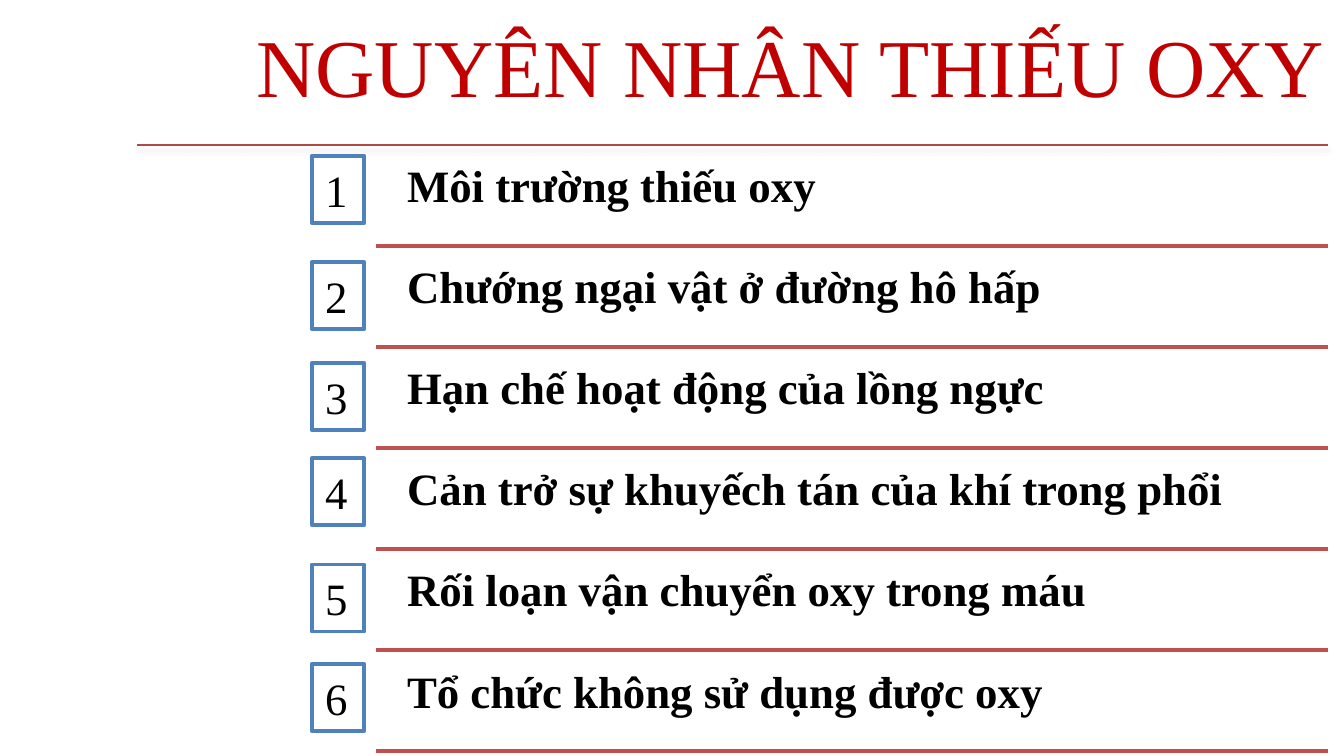
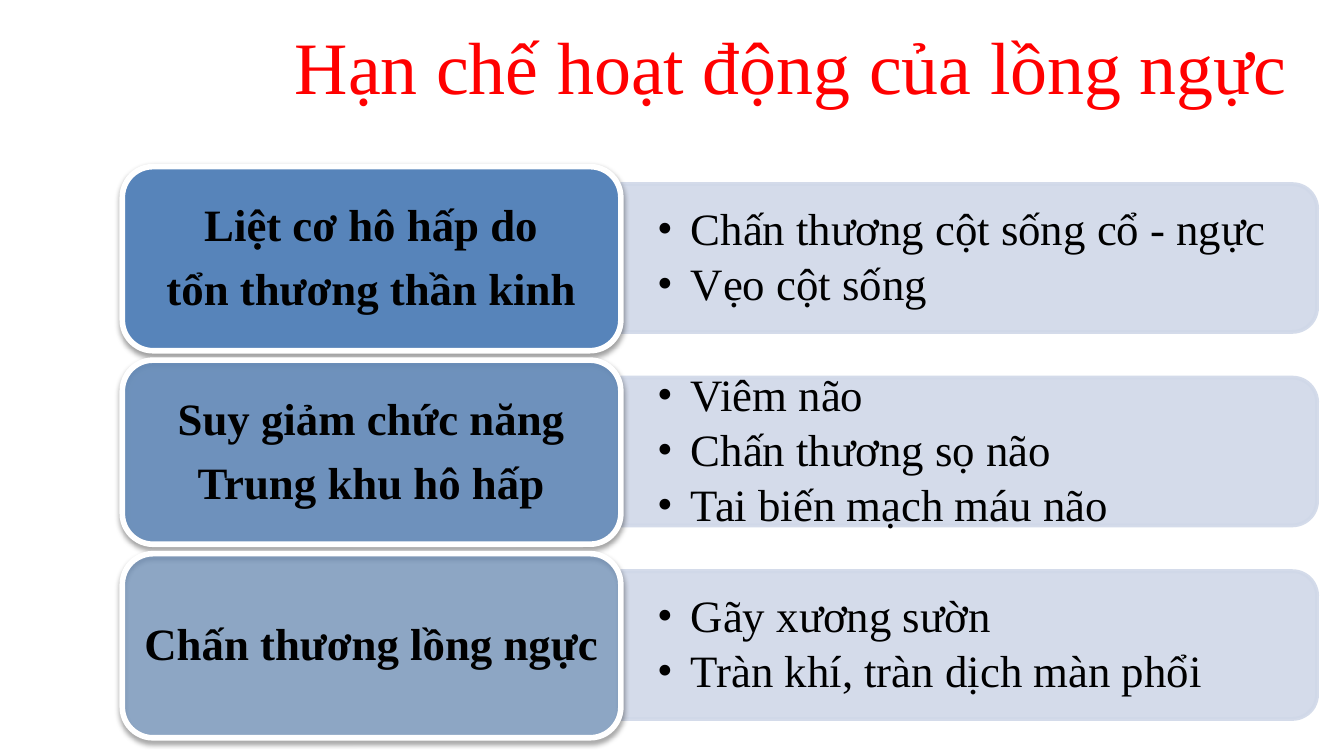
from lxml import etree
from pptx import Presentation
from pptx import util as u
from pptx.dml.color import RGBColor
from pptx.enum import shapes, text
from pptx.oxml.ns import qn

FONT = "Times New Roman"
COLORS = {
    "black": "000000", "white": "FFFFFF", "blue": "4F81BD", "pale": "D0D8E8",
    "rule": "C0504D", "top_rule": "AE4946", "dark_red": "C00000", "red": "FF0000",
}
CAUSES = [  # wording, top of its number box
    ("Môi trường thiếu oxy", 1.16),
    ("Chướng ngại vật ở đường hô hấp", 1.95),
    ("Hạn chế hoạt động của lồng ngực", 2.7),
    ("Cản trở sự khuyếch tán của khí trong phổi", 3.41),
    ("Rối loạn vận chuyển oxy trong máu", 4.2),
    ("Tổ chức không sử dụng được oxy", 4.94),
]
GROUPS = [  # heading lines, bullets, opacity of the heading card
    (["Liệt cơ hô hấp do", "tổn thương thần kinh"],
     ["Chấn thương cột sống cổ - ngực", "Vẹo cột sống"], 90),
    (["Suy giảm chức năng", "Trung khu hô hấp"],
     ["Viêm não", "Chấn thương sọ não", "Tai biến mạch máu não"], 70),
    (["Chấn thương lồng ngực"],
     ["Gãy xương sườn", "Tràn khí, tràn dịch màn phổi"], 50),
]
WIDTH = 10
RIGHT = 9.88
CAUSE_PITCH = (5.59 - 1.83) / 5
GROUP_PITCH = 1.44


def rgb(name):
    return RGBColor.from_string(COLORS[name])


def set_opacity(fill_parent, percent):
    """Add an alpha value to the solid fill inside an spPr or a:ln element."""
    color = fill_parent.find(qn("a:solidFill"))[0]
    etree.SubElement(color, qn("a:alpha"), val=str(percent * 1000))


def set_effects(item, opacity=None, blur=3.1, distance=1.8):
    """Give a downward shadow, or none when no opacity is given."""
    effects = etree.SubElement(item.element.spPr, qn("a:effectLst"))
    if opacity:
        shadow = etree.SubElement(
            effects, qn("a:outerShdw"), blurRad=str(u.Pt(blur)),
            dist=str(u.Pt(distance)), dir="5400000", rotWithShape="0")
        color = etree.SubElement(shadow, qn("a:srgbClr"), val=COLORS["black"])
        etree.SubElement(color, qn("a:alpha"), val=str(opacity * 1000))


def add_bullet(para):
    para.level = 1
    props = para._p.get_or_add_pPr()
    props.set("marL", str(u.Inches(0.25)))
    props.set("indent", str(u.Inches(-0.25)))
    typeface = etree.Element(qn("a:buFont"), typeface=FONT)
    mark = etree.Element(qn("a:buChar"), char="•")
    props.find(qn("a:spcAft")).addnext(typeface)
    typeface.addnext(mark)


def write(item, lines, size=24, color="black", bold=False, align="LEFT",
          anchor="TOP", insets=(0.1, 0.05), line_spacing=None, after=0, bullet=False):
    frame = item.text_frame
    frame.word_wrap = True
    frame.vertical_anchor = getattr(text.MSO_ANCHOR, anchor)
    frame.margin_left = frame.margin_right = u.Inches(insets[0])
    frame.margin_top = frame.margin_bottom = u.Inches(insets[1])
    for index, line in enumerate(lines):
        para = frame.add_paragraph() if index else frame.paragraphs[0]
        para.text = line
        para.alignment = getattr(text.PP_ALIGN, align)
        para.line_spacing = line_spacing
        para.space_after = u.Pt(after)
        para.font.name = FONT
        para.font.size = u.Pt(size)
        para.font.bold = bold
        para.font.color.rgb = rgb(color)
        if bullet:
            add_bullet(para)


def add_text(page, place, lines, **style):
    box = page.shapes.add_textbox(*map(u.Inches, place))
    write(box, lines, **style)


def add_title(page, title, size, color):
    add_text(page, (1.77, 0, 8.23, 0.97), [title], size=size, color=color,
             align="CENTER", anchor="MIDDLE")


def add_rule(page, left, top, color, width, shadow=None):
    rule = page.shapes.add_connector(
        shapes.MSO_CONNECTOR.STRAIGHT, *map(u.Inches, (left, top, RIGHT, top)))
    rule.line.color.rgb = rgb(color)
    rule.line.width = u.Pt(width)
    set_effects(rule, shadow)


def add_block(page, kind, place, fill, line, width):
    block = page.shapes.add_shape(
        getattr(shapes.MSO_SHAPE, kind), *map(u.Inches, place))
    block.fill.solid()
    block.fill.fore_color.rgb = rgb(fill)
    block.line.color.rgb = rgb(line)
    block.line.width = u.Pt(width)
    block.shadow.inherit = False
    return block


def add_cause(page, index, wording, number_top):
    offset = index * CAUSE_PITCH
    add_text(page, (2.93, 1.12 + offset, 6.95, 0.72), [wording], bold=True,
             insets=(0.1, 0.1), line_spacing=0.9, after=8.4)
    add_rule(page, 2.8, 1.83 + offset, "rule", 2)
    number = add_block(page, "RECTANGLE", (2.32, number_top, 0.39, 0.5),
                       "white", "blue", 2)
    write(number, [str(index + 1)])


def add_group(page, index, heading, bullets, opacity):
    offset = index * GROUP_PITCH
    # Pale panel, turned so that its round corners face right
    panel = add_block(page, "ROUND_2_SAME_RECTANGLE",
                      (6.66, -0.67 + offset, 1.1, 5.18), "pale", "pale", 2)
    panel.rotation = 90
    set_opacity(panel.element.spPr, 90)
    set_opacity(panel.element.spPr.find(qn("a:ln")), 90)
    add_text(page, (4.62, 1.43 + offset, 5.13, 0.99), bullets, anchor="MIDDLE",
             insets=(0.27, 0.14), line_spacing=0.9, after=3.6, bullet=True)
    # Heading card
    card = add_block(page, "ROUNDED_RECTANGLE", (0.91, 1.24 + offset, 3.71, 1.37),
                     "blue", "white", 3)
    set_opacity(card.element.spPr, opacity)
    card.element.spPr.remove(card.element.spPr.find(qn("a:effectLst")))
    set_effects(card, 38, distance=1.6)
    add_text(page, (0.97, 1.31 + offset, 3.58, 1.24), heading, bold=True,
             align="CENTER", anchor="MIDDLE", line_spacing=0.9, after=8.4)


def main():
    deck = Presentation()
    deck.slide_width = u.Inches(WIDTH)
    deck.slide_height = u.Inches(WIDTH * 9 / 16)
    blank = deck.slide_layouts[6]

    # Causes of oxygen shortage
    page = deck.slides.add_slide(blank)
    add_title(page, "NGUYÊN NHÂN THIẾU OXY", 44, "dark_red")
    add_rule(page, 1.02, 1.08, "top_rule", 0.75, shadow=35)
    for index, cause in enumerate(CAUSES):
        add_cause(page, index, *cause)

    # Restricted chest movement
    page = deck.slides.add_slide(blank)
    add_title(page, "Hạn chế hoạt động của lồng ngực", 39.6, "red")
    for index, group in enumerate(GROUPS):
        add_group(page, index, *group)

    deck.save("out.pptx")


if __name__ == "__main__":
    main()
